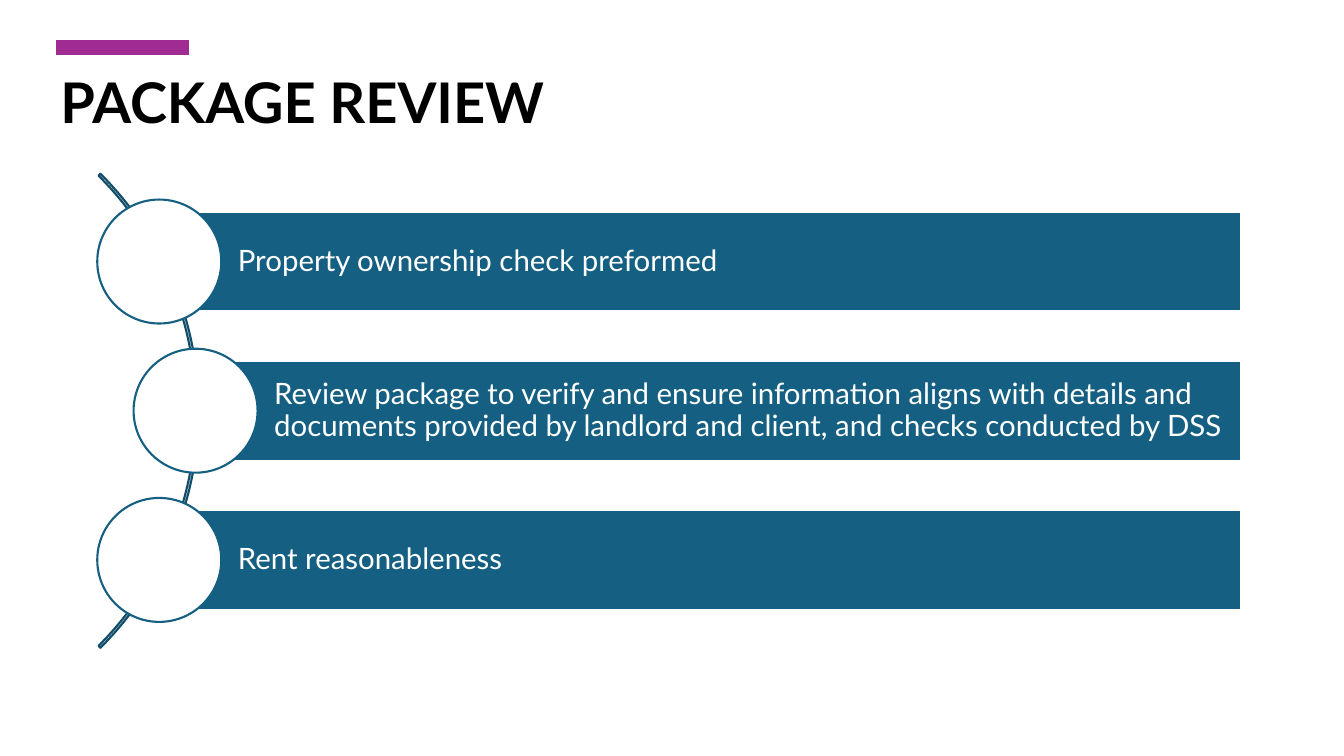
from pptx import Presentation
from pptx.dml.color import RGBColor
from pptx.enum.shapes import MSO_CONNECTOR as Connector, MSO_SHAPE as Shape
from pptx.enum.text import MSO_ANCHOR as Anchor, MSO_AUTO_SIZE as AutoSize, PP_ALIGN as Align
from pptx.oxml.ns import qn
from pptx.util import Inches, Pt
from lxml import etree

COLORS = {
    "title": "000000",
    "accent": "A02B93",
    "arc": "114D68",
    "bar": "156082",
    "white": "FFFFFF",
}
STEPS = [
    (1.58, "Property ownership check preformed"),
    (1.94, "Review package to verify and ensure information aligns with details and "
           "documents provided by landlord and client, and checks conducted by DSS"),
    (1.58, "Rent reasonableness"),
]
BAR_TOP, BAR_RIGHT, BAR_HEIGHT, BAR_STEP = 2.1, 12.31, 0.99, 1.48
CIRCLE = 1.23


def add_outlined(kind, left, top, width, height, fill, line):
    """Add a shadowless preset shape; a fill of None leaves it hollow."""
    shape = page.shapes.add_shape(
        kind, Inches(left), Inches(top), Inches(width), Inches(height))
    shape.shadow.inherit = False
    if fill:
        shape.fill.solid()
        shape.fill.fore_color.rgb = RGBColor.from_string(COLORS[fill])
    else:
        shape.fill.background()
    shape.line.color.rgb = RGBColor.from_string(COLORS[line])
    shape.line.width = Pt(1.5)
    return shape


def write_text(frame, text, size, color, bold=False):
    frame.word_wrap = True
    frame.auto_size = AutoSize.NONE
    para = frame.paragraphs[0]
    para.alignment = Align.LEFT
    para.line_spacing = 0.9
    span = para.add_run()
    span.text = text
    span.font.name = "Lato"
    span.font.size = Pt(size)
    span.font.bold = bold
    span.font.color.rgb = RGBColor.from_string(COLORS[color])


deck = Presentation()
deck.slide_width, deck.slide_height = Inches(13.33), Inches(7.5)
page = deck.slides.add_slide(deck.slide_layouts[5])

# Title and accent line
title = page.shapes.title
title.left, title.top = Inches(0.5), Inches(0.63)
title.width, title.height = Inches(12.28), Inches(0.77)
title.text_frame.vertical_anchor = Anchor.BOTTOM
write_text(title.text_frame, "PACKAGE REVIEW", 40, "title", bold=True)

accent = page.shapes.add_connector(
    Connector.STRAIGHT, Inches(0.56), Inches(0.47), Inches(1.87), Inches(0.47))
accent.line.color.rgb = RGBColor.from_string(COLORS["accent"])
accent.line.width = Pt(10.5)
etree.SubElement(accent._element.spPr, qn("a:effectLst"))

# Arc that links the steps; angles are in units of 100000/60000 degree
arc = add_outlined(Shape.BLOCK_ARC, -4.68, 0.75, 6.65, 6.65, None, "arc")
for index, value in enumerate((189, 27, 0.004)):
    arc.adjustments[index] = value

# One bar and one circle per step, the circle centred on the bar's left edge
for row, (left, text) in enumerate(STEPS):
    top = BAR_TOP + row * BAR_STEP
    bar = add_outlined(Shape.RECTANGLE, left, top, BAR_RIGHT - left, BAR_HEIGHT, "bar", "white")
    frame = bar.text_frame
    frame.margin_left = Inches(0.78)
    frame.margin_top = frame.margin_right = frame.margin_bottom = Inches(0.06)
    frame.vertical_anchor = Anchor.MIDDLE
    write_text(frame, text, 21, "white")
    add_outlined(Shape.OVAL, left - CIRCLE / 2, top + (BAR_HEIGHT - CIRCLE) / 2,
                 CIRCLE, CIRCLE, "white", "bar")

deck.save("out.pptx")
